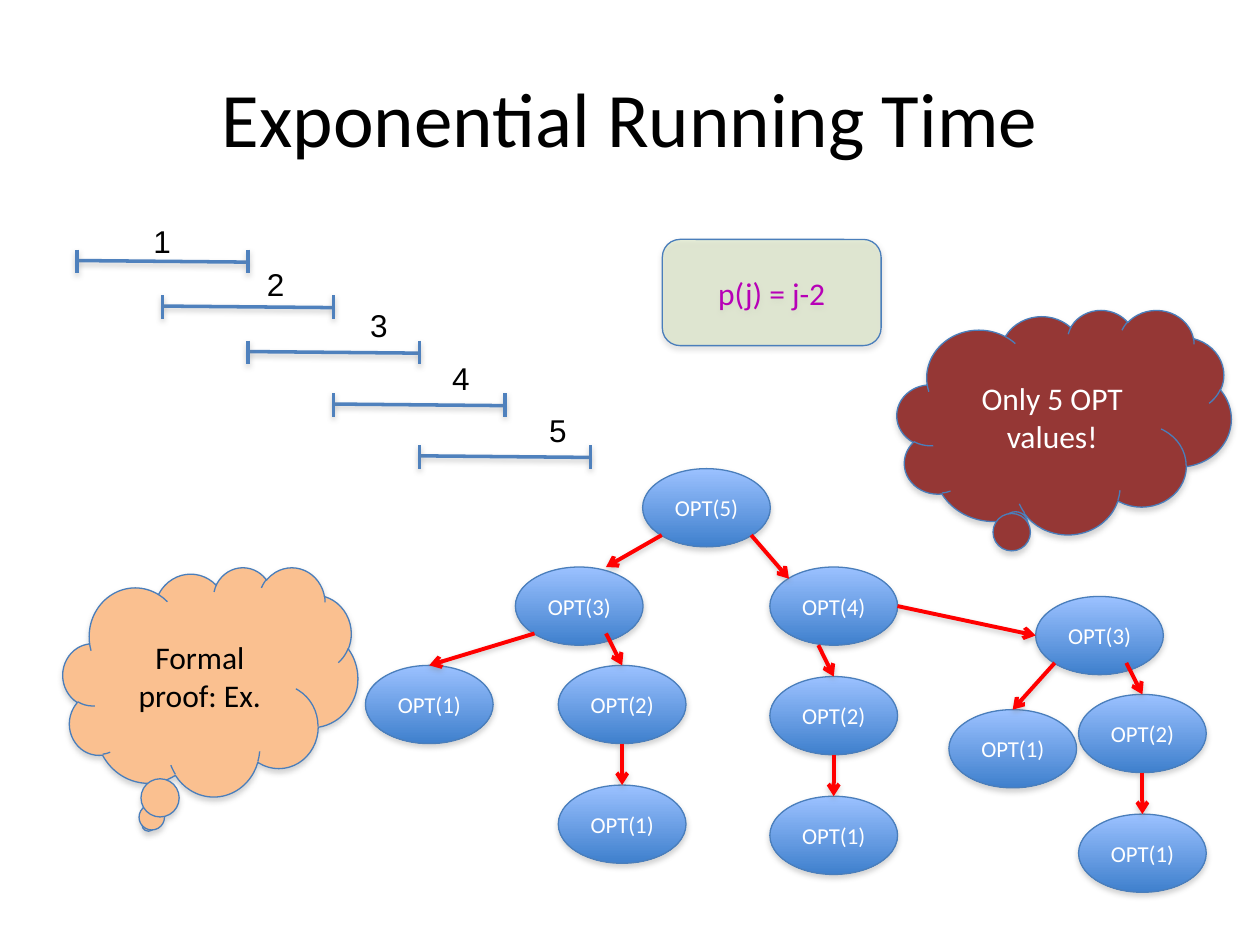
from lxml import etree
from pptx import Presentation
from pptx.dml.color import RGBColor
from pptx.enum.shapes import MSO_CONNECTOR, MSO_SHAPE
from pptx.enum.text import MSO_ANCHOR, PP_ALIGN
from pptx.oxml.ns import qn
from pptx.util import Pt

STRAIGHT = MSO_CONNECTOR.STRAIGHT
OVAL = MSO_SHAPE.OVAL
ROUNDED = MSO_SHAPE.ROUNDED_RECTANGLE
CLOUD = MSO_SHAPE.CLOUD_CALLOUT
MIDDLE = MSO_ANCHOR.MIDDLE
CENTER = PP_ALIGN.CENTER

OUTLINE = "4A7EBB"
NODE_W, NODE_H = 73, 44.7
TOP = (0.5, 0)
TOP_LEFT = (0.15, 0.15)
LEFT = (0, 0.5)
RIGHT = (1, 0.5)
BOTTOM = (0.5, 1)
BOTTOM_LEFT = (0.15, 0.85)
BOTTOM_RIGHT = (0.85, 0.85)
INNER_RIGHT = (0.71, 0.85)


def rgb(value):
    return RGBColor.from_string(value)


def add_shadow(properties, distance, opacity):
    effects = properties.find(qn("a:effectLst"))
    if effects is None:
        effects = etree.SubElement(properties, qn("a:effectLst"))
    outer = etree.SubElement(effects, qn("a:outerShdw"), blurRad=str(Pt(3.1)),
                             dist=str(Pt(distance)), dir="5400000", rotWithShape="0")
    tint = etree.SubElement(outer, qn("a:srgbClr"), val="808080")
    etree.SubElement(tint, qn("a:alpha"), val=str(opacity * 1000))


def write(frame, text, size, color, font="Calibri", align=CENTER, wrap=True):
    frame.text = text
    frame.word_wrap = wrap
    frame.vertical_anchor = MIDDLE
    paragraph = frame.paragraphs[0]
    paragraph.alignment = align
    paragraph.font.size = Pt(size)
    paragraph.font.name = font
    paragraph.font.color.rgb = rgb(color)


def add_line(slide, start, end, color, width, arrow=False):
    line = slide.shapes.add_connector(STRAIGHT, *map(Pt, (*start, *end)))
    line.line.color.rgb = rgb(color)
    line.line.width = Pt(width)
    if arrow:
        etree.SubElement(line.line._get_or_add_ln(), qn("a:tailEnd"), type="arrow")
    add_shadow(line._element.spPr, 1.6, 38)
    return line


def add_block(slide, kind, box, text, size, text_color, fill=None, wrap=True):
    block = slide.shapes.add_shape(kind, *map(Pt, box))
    if fill:
        block.fill.solid()
        block.fill.fore_color.rgb = rgb(fill)
    else:
        block.fill.gradient()
        block.fill.gradient_angle = 270
        for stop, color in zip(block.fill.gradient_stops, ("9BC1FF", "3F80CD")):
            stop.color.rgb = rgb(color)
    block.line.color.rgb = rgb(OUTLINE)
    block.line.width = Pt(0.75)
    block.shadow.inherit = False
    add_shadow(block._element.spPr, 1.8, 35)
    write(block.text_frame, text, size, text_color, wrap=wrap)
    return block


def add_title(slide, box):
    title = slide.shapes.add_textbox(*map(Pt, box))
    write(title.text_frame, "Exponential Running Time", 44, "000000")


def add_intervals(slide, left, top):
    length = 97.8
    rows = [(0, 36.6, -19.5), (26, 101.4, 5), (52, 160.5, 28.8),
            (82, 207.3, 59), (111.6, 262.7, 88.5)]
    for index, (row, label_x, label_y) in enumerate(rows):
        x, y = left + index * length / 2, top + row
        add_line(slide, (x, y + 6.3), (x + length, y + 7.2), "4F81BD", 2)
        for end in (x, x + length):
            add_line(slide, (end, y), (end, y + 13.6), "4F81BD", 2)
        label = slide.shapes.add_textbox(
            Pt(left + label_x), Pt(top + label_y), Pt(24.5), Pt(29))
        write(label.text_frame, str(index + 1), 18, "000000", "Arial", None, False)


def add_recurrence(slide, box):
    rule = add_block(slide, ROUNDED, box, "p(j) = j-2", 18, "B700B7", "D7E4BD")
    fill_color = rule._element.spPr.find(qn("a:solidFill"))[0]
    etree.SubElement(fill_color, qn("a:alpha"), val="53000")


def add_call_tree(slide, left, top):
    places = {
        "root": (5, 158.4, 0),
        "left": (3, 85.7, 56.2),
        "right": (4, 231.1, 56.2),
        "left one": (1, 0, 112.4),
        "left two": (2, 110.2, 112.4),
        "left leaf": (1, 110.2, 180.8),
        "middle two": (2, 231.1, 118.8),
        "middle leaf": (1, 231.1, 187.2),
        "far": (3, 383, 73),
        "far one": (1, 333.4, 137.7),
        "far two": (2, 407.5, 129),
        "far leaf": (1, 407.5, 197.4),
    }
    calls = [
        ("root", BOTTOM_LEFT, "left", (0.71, 0)),
        ("root", BOTTOM_RIGHT, "right", TOP_LEFT),
        ("left", BOTTOM_LEFT, "left one", TOP),
        ("left", INNER_RIGHT, "left two", TOP),
        ("left two", BOTTOM, "left leaf", TOP),
        ("right", (0.38, 1), "middle two", TOP),
        ("middle two", BOTTOM, "middle leaf", TOP),
        ("right", RIGHT, "far", LEFT),
        ("far", BOTTOM_LEFT, "far one", TOP),
        ("far", INNER_RIGHT, "far two", TOP),
        ("far two", BOTTOM, "far leaf", TOP),
    ]
    nodes = {}
    for name, (value, x, y) in places.items():
        box = (left + x, top + y, NODE_W, NODE_H)
        nodes[name] = add_block(slide, OVAL, box, f"OPT({value})", 13, "FFFFFF", wrap=False)

    def point(name, fraction):
        x, y = places[name][1:]
        return left + x + fraction[0] * NODE_W, top + y + fraction[1] * NODE_H

    for caller, start, callee, end in calls:
        arrow = add_line(slide, point(caller, start), point(callee, end),
                         "FF0000", 2.25, arrow=True)
        if end == TOP:
            arrow.end_connect(nodes[callee], 0)


def add_thought(slide, box, text, text_color, fill, tail):
    cloud = add_block(slide, CLOUD, box, text, 18, text_color, fill)
    for index, offset in enumerate(tail):
        cloud.adjustments[index] = offset


def main():
    deck = Presentation()
    deck.slide_width, deck.slide_height = Pt(720), Pt(540)
    slide = deck.slides.add_slide(deck.slide_layouts[6])
    add_title(slide, (36, 21.6, 648, 90))
    add_intervals(slide, 44, 142.6)
    add_recurrence(slide, (378.5, 136.8, 125, 60.7))
    add_call_tree(slide, 208.8, 267.8)
    add_thought(slide, (36, 324, 168.5, 131), "Formal proof: Ex.",
                "000000", "FAC090", (-0.21, 0.625))
    add_thought(slide, (512.6, 177, 191, 128.3), "Only 5 OPT values!",
                "FFFFFF", "953735", (-0.15, 0.47))
    deck.save("out.pptx")


if __name__ == "__main__":
    main()
